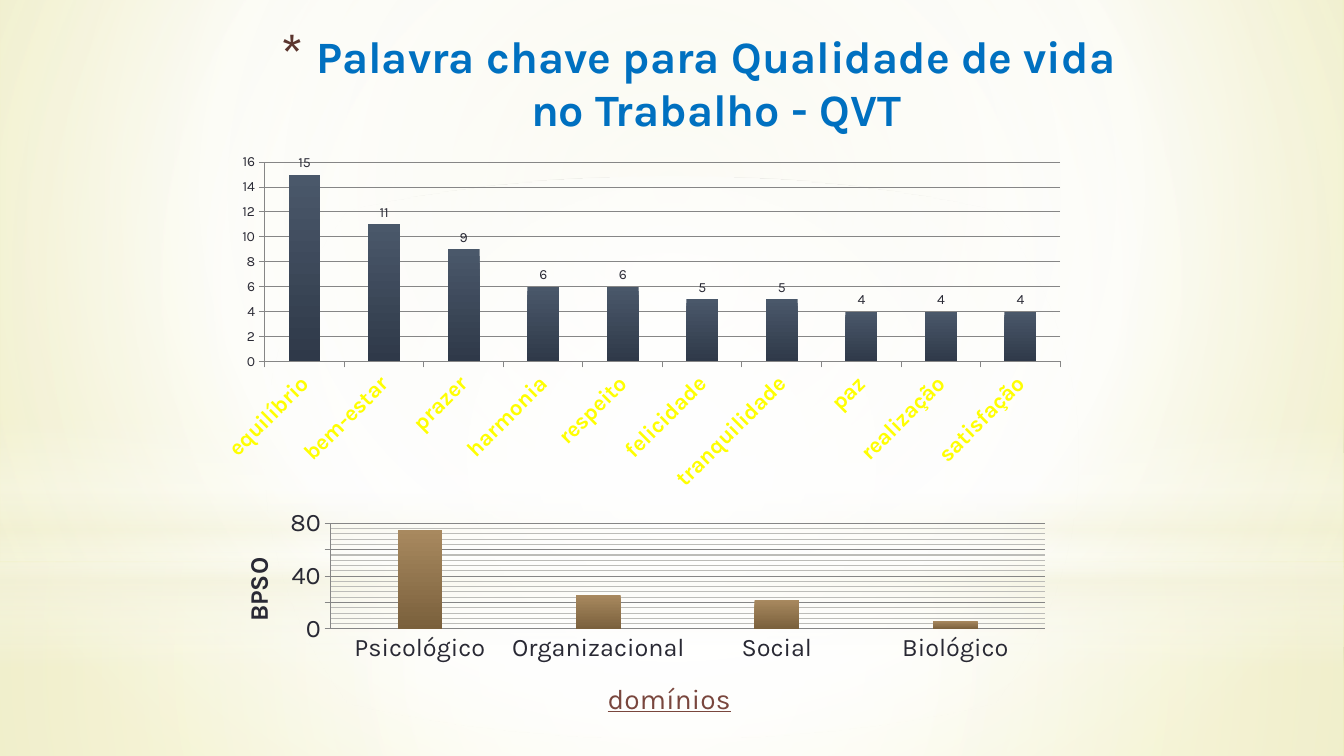
from lxml.etree import SubElement
from pptx import Presentation
from pptx.chart.data import CategoryChartData
from pptx.dml.color import RGBColor
from pptx.enum.chart import XL_CHART_TYPE, XL_LABEL_POSITION, XL_TICK_MARK
from pptx.enum.shapes import MSO_SHAPE
from pptx.enum.text import MSO_ANCHOR, MSO_AUTO_SIZE, PP_ALIGN
from pptx.oxml.ns import qn
from pptx.util import Inches, Pt

WHITE = RGBColor(0xFF, 0xFF, 0xFF)
CREAM = RGBColor(0xF3, 0xF2, 0xDC)
SAND = RGBColor(0xEF, 0xED, 0xCC)
LIME = RGBColor(0xE9, 0xE5, 0x8A)
BLUE = RGBColor(0x00, 0x70, 0xC0)
BROWN = RGBColor(0x5B, 0x35, 0x2E)
RUST = RGBColor(0x79, 0x46, 0x3D)
INK = RGBColor(0x29, 0x29, 0x34)
YELLOW = RGBColor(0xFF, 0xFF, 0x00)
GREY = RGBColor(0x86, 0x86, 0x86)
PALE_GREY = RGBColor(0xBC, 0xBC, 0xB8)
SLATE = [(0, RGBColor(0x4A, 0x58, 0x6A), 100), (100, RGBColor(0x2F, 0x39, 0x49), 100)]
BRONZE = [(0, RGBColor(0xA8, 0x89, 0x5F), 100), (100, RGBColor(0x7A, 0x60, 0x3C), 100)]
CENTRE = (50, 50, 50, 50)


def assign(target, values):
    for name, value in values.items():
        setattr(target, name, value)


def format_font(font, color, **values):
    assign(font, values)
    font.color.rgb = color


def paint_gradient(fill, owner, stops, focus=None):
    """Stops are (position, colour, opacity) in percent; without a focus the blend runs downwards."""
    fill.gradient()
    gradient = owner.find(".//" + qn("a:gradFill"))
    for child in list(gradient):
        gradient.remove(child)
    stop_list = SubElement(gradient, qn("a:gsLst"))
    for position, color, opacity in stops:
        stop = SubElement(stop_list, qn("a:gs"), pos=str(position * 1000))
        tone = SubElement(stop, qn("a:srgbClr"), val=str(color))
        if opacity < 100:
            SubElement(tone, qn("a:alpha"), val=str(opacity * 1000))
    if focus:
        circle = SubElement(gradient, qn("a:path"), path="circle")
        sides = {side: str(share * 1000) for side, share in zip("ltrb", focus)}
        SubElement(circle, qn("a:fillToRect"), **sides)
    else:
        SubElement(gradient, qn("a:lin"), ang="5400000", scaled="0")


def place_in_chart(owner, inner=False, **shares):
    """Set a manual layout, in shares of the chart's size."""
    layout = owner.find(qn("c:layout"))
    if layout is None:
        layout = owner.makeelement(qn("c:layout"))
        owner.insert(len(owner.findall(qn("c:tx"))), layout)
    manual = SubElement(layout, qn("c:manualLayout"))
    if inner:
        SubElement(manual, qn("c:layoutTarget"), val="inner")
    for mode in ("xMode", "yMode"):
        SubElement(manual, qn("c:" + mode), val="edge")
    for name, share in shares.items():
        SubElement(manual, qn("c:" + name), val=str(share))


class SlideBuilder:
    """Places elements by (left, top, width, height) in percent of the slide."""

    font = "Karla"

    def __init__(self, deck):
        self.deck = deck
        self.slide = deck.slides.add_slide(deck.slide_layouts[5])

    def box(self, shares):
        sizes = (self.deck.slide_width, self.deck.slide_height) * 2
        return [round(size * share / 100) for size, share in zip(sizes, shares)]

    def background(self, stops, focus):
        paint_gradient(self.slide.background.fill, self.slide.element, stops, focus)

    def glow(self, kind, shares, stops, focus=None):
        glow = self.slide.shapes.add_shape(kind, *self.box(shares))
        glow.shadow.inherit = False
        glow.line.fill.background()
        paint_gradient(glow.fill, glow.element, stops, focus)

    def title(self, text, shares):
        title = self.slide.shapes.title
        self.slide.shapes.element.append(title.element)
        assign(title, dict(zip(("left", "top", "width", "height"), self.box(shares))))
        frame = title.text_frame
        assign(frame, dict(text=text, word_wrap=True, auto_size=MSO_AUTO_SIZE.NONE,
                           vertical_anchor=MSO_ANCHOR.TOP))
        paragraph = frame.paragraphs[0]
        paragraph.alignment = PP_ALIGN.CENTER
        format_font(paragraph.runs[0].font, BLUE, name=self.font, size=Pt(32), bold=True)
        properties = paragraph._p.get_or_add_pPr()
        properties.set("marL", str(Inches(0.35)))
        properties.set("indent", str(-Inches(0.35)))
        SubElement(SubElement(properties, qn("a:buClr")), qn("a:srgbClr"), val=str(BROWN))
        SubElement(properties, qn("a:buSzPct"), val="128000")
        SubElement(properties, qn("a:buFont"), typeface=self.font)
        SubElement(properties, qn("a:buChar"), char="*")

    def columns(self, shares, values, stops, size, gap, top, step, plot):
        data = CategoryChartData()
        data.categories = list(values)
        data.add_series("Series 1", list(values.values()))
        chart = self.slide.shapes.add_chart(
            XL_CHART_TYPE.COLUMN_CLUSTERED, *self.box(shares), data).chart
        assign(chart, dict(has_title=False, has_legend=False))
        format_font(chart.font, INK, name=self.font, size=Pt(size))
        bars = chart.plots[0]
        assign(bars, dict(gap_width=gap, vary_by_categories=False))
        series = bars.series[0]
        paint_gradient(series.format.fill, series._element, stops)
        scale = chart.value_axis
        assign(scale, dict(minimum_scale=0, maximum_scale=top, major_unit=step,
                           has_major_gridlines=True))
        lines = [axis.format.line for axis in (scale, chart.category_axis)]
        for line in lines + [scale.major_gridlines.format.line]:
            line.color.rgb = GREY
            line.width = Pt(0.75)
        for axis in (scale, chart.category_axis):
            axis.major_tick_mark = XL_TICK_MARK.OUTSIDE
            axis.minor_tick_mark = XL_TICK_MARK.NONE
        place_in_chart(chart.element.find(".//" + qn("c:plotArea")), inner=True, **plot)
        return chart

    def minor_gridlines(self, axis, unit, color):
        assign(axis, dict(minor_unit=unit, has_minor_gridlines=True))
        owner = axis._element.find(qn("c:minorGridlines"))
        for tag in ("c:spPr", "a:ln", "a:solidFill"):
            owner = SubElement(owner, qn(tag))
        SubElement(owner, qn("a:srgbClr"), val=str(color))

    def axis_title(self, axis, text, x, y, color, **style):
        frame = axis.axis_title.text_frame
        frame.text = text
        format_font(frame.paragraphs[0].runs[0].font, color, name=self.font, **style)
        place_in_chart(axis.axis_title._element, x=x, y=y)


def main():
    deck = Presentation()
    deck.slide_width, deck.slide_height = Inches(13.33), Inches(7.5)
    builder = SlideBuilder(deck)

    builder.background([(0, SAND, 100), (60, WHITE, 100), (100, LIME, 100)], (20, 10, 20, 60))
    builder.glow(MSO_SHAPE.RECTANGLE, (0, 74.4, 100, 25.6),
                 [(0, WHITE, 91), (37, WHITE, 76), (100, CREAM, 79)], CENTRE)
    builder.glow(MSO_SHAPE.RECTANGLE, (0, 0, 100, 74.4),
                 [(0, WHITE, 89), (48, WHITE, 62), (100, CREAM, 79)], CENTRE)
    builder.glow(MSO_SHAPE.RECTANGLE, (0, 54.93, 100, 33.33),
                 [(0, WHITE, 0), (29, WHITE, 30), (45, CREAM, 40),
                  (55, WHITE, 26), (65, CREAM, 60), (100, WHITE, 0)])
    builder.glow(MSO_SHAPE.OVAL, (0, 23.33, 100, 74.4),
                 [(0, WHITE, 100), (56, WHITE, 0)], CENTRE)

    builder.title("Palavra chave para Qualidade de vida no Trabalho - QVT",
                  (20.1, 3.07, 63.77, 13.33))

    domains = builder.columns(
        (15.75, 66.8, 63.24, 30.4),
        {"Psicológico": 75, "Organizacional": 26, "Social": 22, "Biológico": 6},
        BRONZE, size=18, gap=300, top=80, step=20, plot=dict(x=0.14, y=0.08, w=0.84, h=0.46))
    domains.category_axis.major_tick_mark = XL_TICK_MARK.NONE
    builder.minor_gridlines(domains.value_axis, 4, PALE_GREY)
    builder.axis_title(domains.category_axis, "domínios", 0.46, 0.74, RUST,
                       size=Pt(20), bold=False, underline=True)
    builder.axis_title(domains.value_axis, "BPSO", 0.03, 0.21, INK, size=Pt(18), bold=True)

    keywords = builder.columns(
        (15.15, 19.6, 65.04, 46.27),
        {"equilíbrio": 15, "bem-estar": 11, "prazer": 9, "harmonia": 6, "respeito": 6,
         "felicidade": 5, "tranquilidade": 5, "paz": 4, "realização": 4, "satisfação": 4},
        SLATE, size=10, gap=150, top=16, step=2, plot=dict(x=0.07, y=0.04, w=0.91, h=0.57))
    words = keywords.category_axis
    format_font(words.tick_labels.font, YELLOW, name=builder.font, size=Pt(16), bold=True)
    words._element.find(".//" + qn("a:bodyPr")).set("rot", "-2700000")
    counts = keywords.plots[0]
    counts.has_data_labels = True
    assign(counts.data_labels, dict(show_value=True, position=XL_LABEL_POSITION.OUTSIDE_END))
    format_font(counts.data_labels.font, INK, name=builder.font, size=Pt(10))

    deck.save("out.pptx")


if __name__ == "__main__":
    main()
